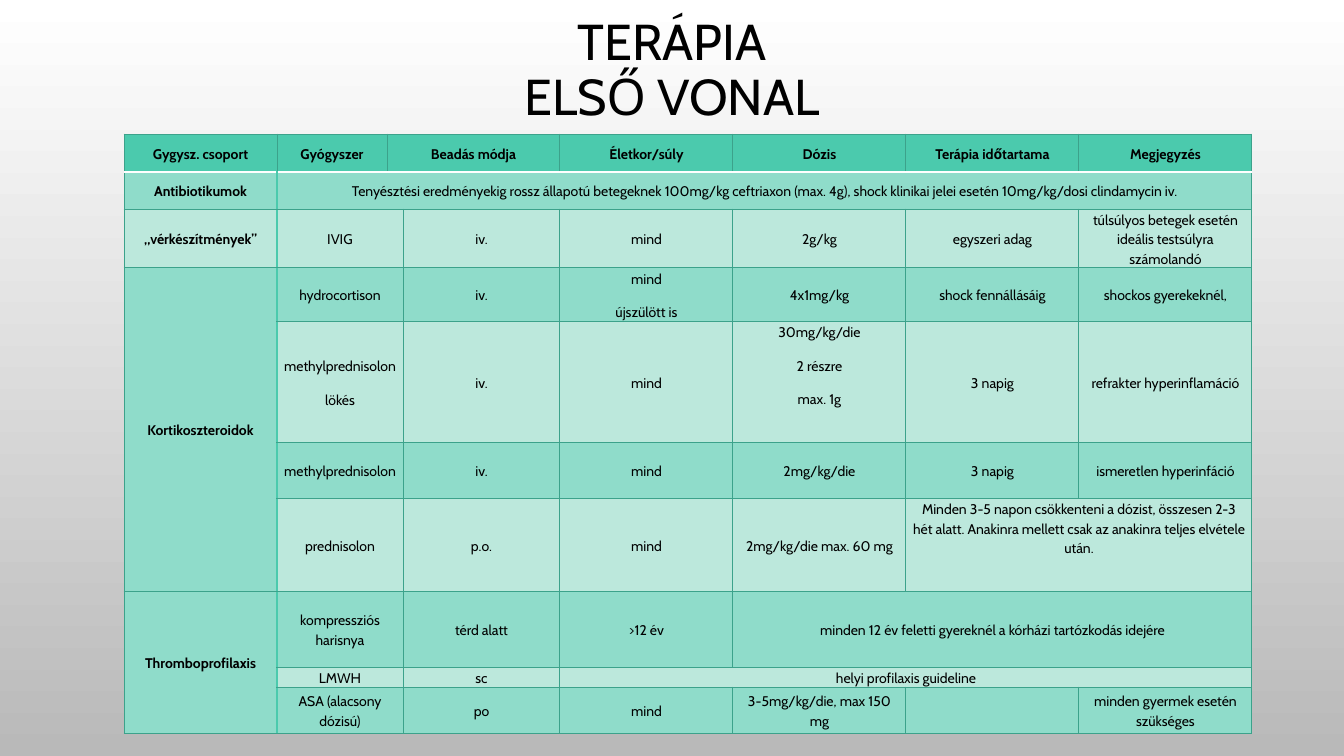
from lxml.etree import SubElement
from pptx import Presentation
from pptx.dml.color import RGBColor
from pptx.enum.text import MSO_ANCHOR, MSO_AUTO_SIZE, PP_ALIGN
from pptx.oxml.ns import qn
from pptx.util import Emu, Pt

COLORS = {
    "text": "000000",
    "white": "FFFFFF",
    "gray": "B9B9B9",
    "header": "4BCAAD",
    "dark_band": "8FDCCA",
    "light_band": "BCE8DC",
    "grid": "3CA28B",
}
SCALE = 12192000 / 1344


def px(value):
    return Emu(round(value * SCALE))


def write_text(frame, text, size, bold=False, line_spacing=1.0, space_after=0):
    for index, line in enumerate(text.split("\n")):
        paragraph = frame.add_paragraph() if index else frame.paragraphs[0]
        paragraph.text = line
        paragraph.alignment = PP_ALIGN.CENTER
        paragraph.line_spacing = line_spacing
        paragraph.space_before = Pt(0)
        paragraph.space_after = Pt(space_after)
        for run in paragraph.runs:
            run.font.name = "Cabin"
            run.font.size = Pt(size)
            run.font.bold = bold
            run.font.color.rgb = RGBColor.from_string(COLORS["text"])


presentation = Presentation()
presentation.slide_width = px(1344)
presentation.slide_height = px(756)
slide = presentation.slides.add_slide(presentation.slide_layouts[5])

background = slide.background.fill
background.gradient()
background.gradient_angle = 270
for stop, position, color in zip(background.gradient_stops, (0, 1), ("white", "gray")):
    stop.position = position
    stop.color.rgb = RGBColor.from_string(COLORS[color])

title = slide.shapes.title
title.left, title.top, title.width, title.height = px(92), px(9), px(1160), px(125)
title.text_frame.auto_size = MSO_AUTO_SIZE.NONE
title.text_frame.vertical_anchor = MSO_ANCHOR.MIDDLE
write_text(title.text_frame, "TERÁPIA\vELSŐ VONAL", size=36, line_spacing=0.9)

ROWS = [
    ["Gygysz. csoport", "Gyógyszer", "Beadás módja", None, "Életkor/súly", "Dózis",
     "Terápia időtartama", "Megjegyzés"],
    ["Antibiotikumok",
     "Tenyésztési eredményekig rossz állapotú betegeknek 100mg/kg ceftriaxon (max. 4g), "
     "shock klinikai jelei esetén 10mg/kg/dosi clindamycin iv.",
     None, None, None, None, None, None],
    ["„vérkészítmények”", "IVIG", None, "iv.", "mind", "2g/kg", "egyszeri adag",
     "túlsúlyos betegek esetén ideális testsúlyra számolandó"],
    ["Kortikoszteroidok", "hydrocortison", None, "iv.", "mind\nújszülött is", "4x1mg/kg",
     "shock fennállásáig", "shockos gyerekeknél,"],
    [None, "methylprednisolon\nlökés", None, "iv.", "mind", "30mg/kg/die\n2 részre\nmax. 1g",
     "3 napig", "refrakter hyperinflamáció"],
    [None, "methylprednisolon", None, "iv.", "mind", "2mg/kg/die", "3 napig",
     "ismeretlen hyperinfáció"],
    [None, "prednisolon", None, "p.o.", "mind", "2mg/kg/die max. 60 mg",
     "Minden 3-5 napon csökkenteni a dózist, összesen 2-3 hét alatt. "
     "Anakinra mellett csak az anakinra teljes elvétele után.", None],
    ["Thromboprofilaxis", "kompressziós harisnya", None, "térd alatt", ">12 év",
     "minden 12 év feletti gyereknél a kórházi tartózkodás idejére", None, None],
    [None, "LMWH", None, "sc", "helyi profilaxis guideline", None, None, None],
    [None, "ASA (alacsony dózisú)", None, "po", "mind", "3-5mg/kg/die, max 150 mg", "",
     "minden gyermek esetén szükséges"],
]
COLUMN_WIDTHS = [153, 110, 16, 157, 173, 173, 173, 173]
ROW_HEIGHTS = [38, 37, 58, 54, 121, 56, 92, 76, 20, 46]
RAISED_CELLS = {(4, 5), (6, 6)}

table = slide.shapes.add_table(
    len(ROWS), len(COLUMN_WIDTHS), px(124), px(134),
    px(sum(COLUMN_WIDTHS)), px(sum(ROW_HEIGHTS)),
).table
table.horz_banding = False
for column, width in zip(table.columns, COLUMN_WIDTHS):
    column.width = px(width)
for row, height in zip(table.rows, ROW_HEIGHTS):
    row.height = px(height)

for row_index, texts in enumerate(ROWS):
    for column_index, text in enumerate(texts):
        cell = table.cell(row_index, column_index)
        cell.vertical_anchor = MSO_ANCHOR.MIDDLE
        cell.margin_left = cell.margin_right = px(6)
        cell.margin_top = 0
        cell.margin_bottom = px(34 if (row_index, column_index) in RAISED_CELLS else 0)

        borders = dict.fromkeys(("lnL", "lnR", "lnT", "lnB"), ("grid", 0.75))
        if row_index == 0:
            borders["lnB"] = ("white", 1.25)
        elif column_index == 0:
            borders["lnR"] = ("header", 1.25)
        elif column_index == 1:
            borders["lnL"] = ("header", 1.25)
        if row_index == 1 and column_index > 0:
            borders["lnT"] = ("white", 1.25)
        properties = cell._tc.get_or_add_tcPr()
        for side, (color, width) in borders.items():
            line = SubElement(properties, qn(f"a:{side}"), w=str(Pt(width)))
            fill = SubElement(line, qn("a:solidFill"))
            SubElement(fill, qn("a:srgbClr"), val=COLORS[color])

        band = "header" if row_index == 0 else "dark_band" if row_index % 2 else "light_band"
        cell.fill.solid()
        cell.fill.fore_color.rgb = RGBColor.from_string(COLORS[band])

        if text is None:
            continue
        last_row, last_column = row_index, column_index
        if column_index == 0:
            while last_row + 1 < len(ROWS) and ROWS[last_row + 1][0] is None:
                last_row += 1
        while last_column + 1 < len(texts) and texts[last_column + 1] is None:
            last_column += 1
        if (last_row, last_column) != (row_index, column_index):
            cell.merge(table.cell(last_row, last_column))
        write_text(cell.text_frame, text, size=10, bold=row_index == 0 or column_index == 0,
                   line_spacing=1.15, space_after=10)

presentation.save("out.pptx")
